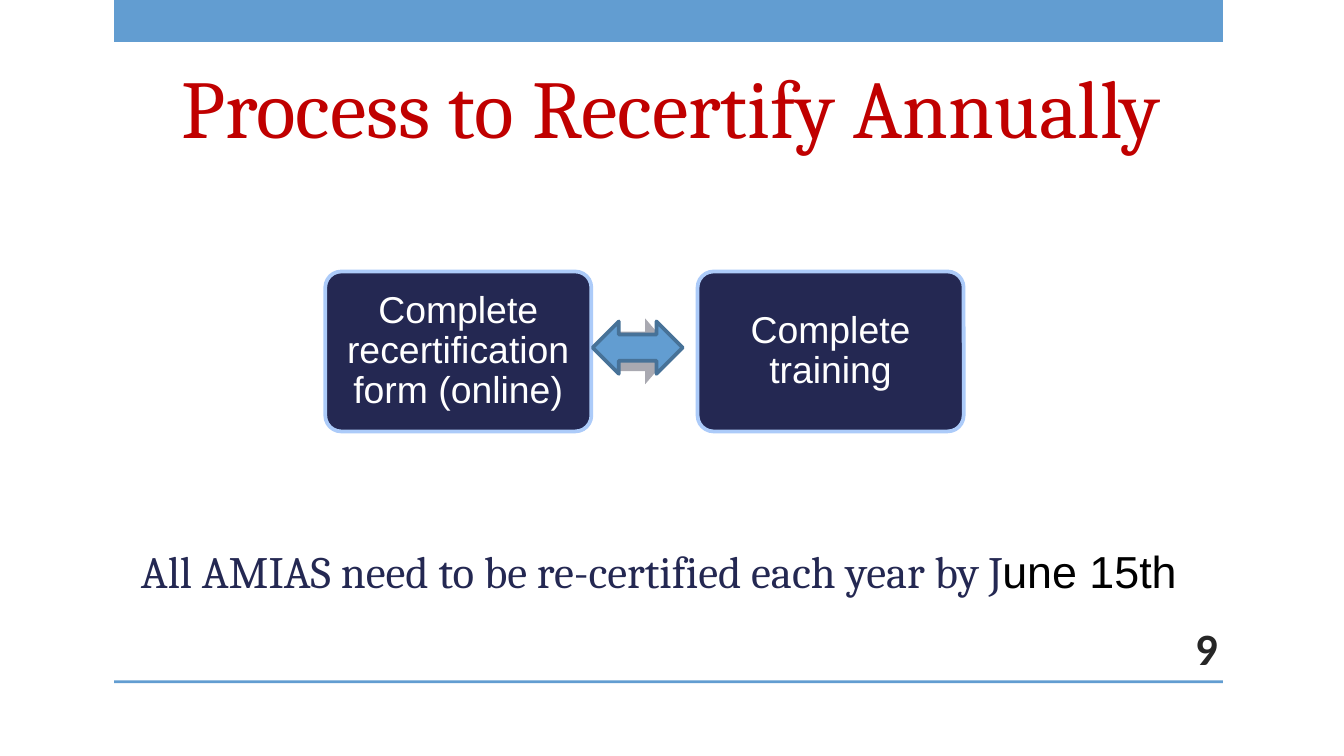
from pptx import Presentation
from pptx.dml.color import RGBColor
from pptx.enum.shapes import MSO_SHAPE as Shape
from pptx.enum.text import MSO_ANCHOR as Anchor, PP_ALIGN as Align
from pptx.util import Inches, Pt

WIDTH = 10
HEIGHT = WIDTH * 9 / 16
BLUE, NAVY = "629DD1", "242852"


def color(hex_code):
    return RGBColor.from_string(hex_code)


def place(left, top, width, height):
    """Turn percentages of the slide's size into lengths."""
    return (Inches(left * WIDTH / 100), Inches(top * HEIGHT / 100),
            Inches(width * WIDTH / 100), Inches(height * HEIGHT / 100))


def style(font, name, size, hex_code, bold=False):
    font.name, font.size, font.bold = name, Pt(size), bold
    font.color.rgb = color(hex_code)


def add_block(page, kind, area, fill, line=None, adjustments=()):
    block = page.shapes.add_shape(kind, *place(*area))
    block.shadow.inherit = False
    block.fill.solid()
    block.fill.fore_color.rgb = color(fill)
    if line:
        block.line.color.rgb = color(line)
        block.line.width = Pt(2)
    else:
        block.line.fill.background()
    for index, value in enumerate(adjustments):
        block.adjustments[index] = value
    return block


def add_text(page, area, text, align=Align.LEFT, anchor=Anchor.TOP):
    box = page.shapes.add_textbox(*place(*area))
    frame = box.text_frame
    frame.word_wrap = True
    frame.vertical_anchor = anchor
    para = frame.paragraphs[0]
    para.text = text
    para.alignment = align
    return para


def add_step(page, left, text):
    step = add_block(page, Shape.ROUNDED_RECTANGLE, (left, 35.91, 19.8, 21.16),
                     NAVY, "ACCBF9", [0.1])
    frame = step.text_frame
    frame.word_wrap = True
    frame.vertical_anchor = Anchor.MIDDLE
    frame.margin_left = frame.margin_right = Inches(0.08)
    frame.margin_top = frame.margin_bottom = Inches(0.08)
    para = frame.paragraphs[0]
    para.text = text
    para.alignment = Align.CENTER
    para.line_spacing = 0.9
    style(para.font, "Arial", 20, "FFFFFF")


def main():
    deck = Presentation()
    deck.slide_width, deck.slide_height = Inches(WIDTH), Inches(HEIGHT)
    page = deck.slides.add_slide(deck.slide_layouts[6])

    # Top band and bottom rule
    for top, height in ((0, 5.55), (90, 0.36)):
        add_block(page, Shape.RECTANGLE, (8.5, top, 82.5, height), BLUE)

    # Title and page number
    title = add_text(page, (3.3, 9.07, 93.3, 9.24),
                     "Process to Recertify Annually", Align.CENTER)
    title.line_spacing = 0.8
    style(title.font, "Cambria", 44, "C00000")
    number = add_text(page, (83.3, 83.02, 8.3, 5.33), "9", Align.RIGHT, Anchor.MIDDLE)
    style(number.font, "Calibri", 24, "262626", bold=True)

    # Two steps with the arrows between them
    add_step(page, 24.2, "Complete recertification form (online)")
    add_block(page, Shape.RIGHT_ARROW, (45.9, 42.13, 4.2, 8.71),
              "A9A9B1", adjustments=[0.6, 0.5])
    add_step(page, 51.9, "Complete training")
    add_block(page, Shape.LEFT_RIGHT_ARROW, (44.1, 42.53, 6.7, 6.93),
              BLUE, "477298", [0.5, 0.5])

    # Deadline
    deadline = add_text(page, (9.5, 71, 84.8, 8.9),
                        "All AMIAS need to be re-certified each year by J")
    style(deadline.runs[0].font, "Cambria", 24, NAVY)
    span = deadline.add_run()
    span.text = "une 15th"
    style(span.font, "Arial", 24, "000000")

    deck.save("out.pptx")


if __name__ == "__main__":
    main()
